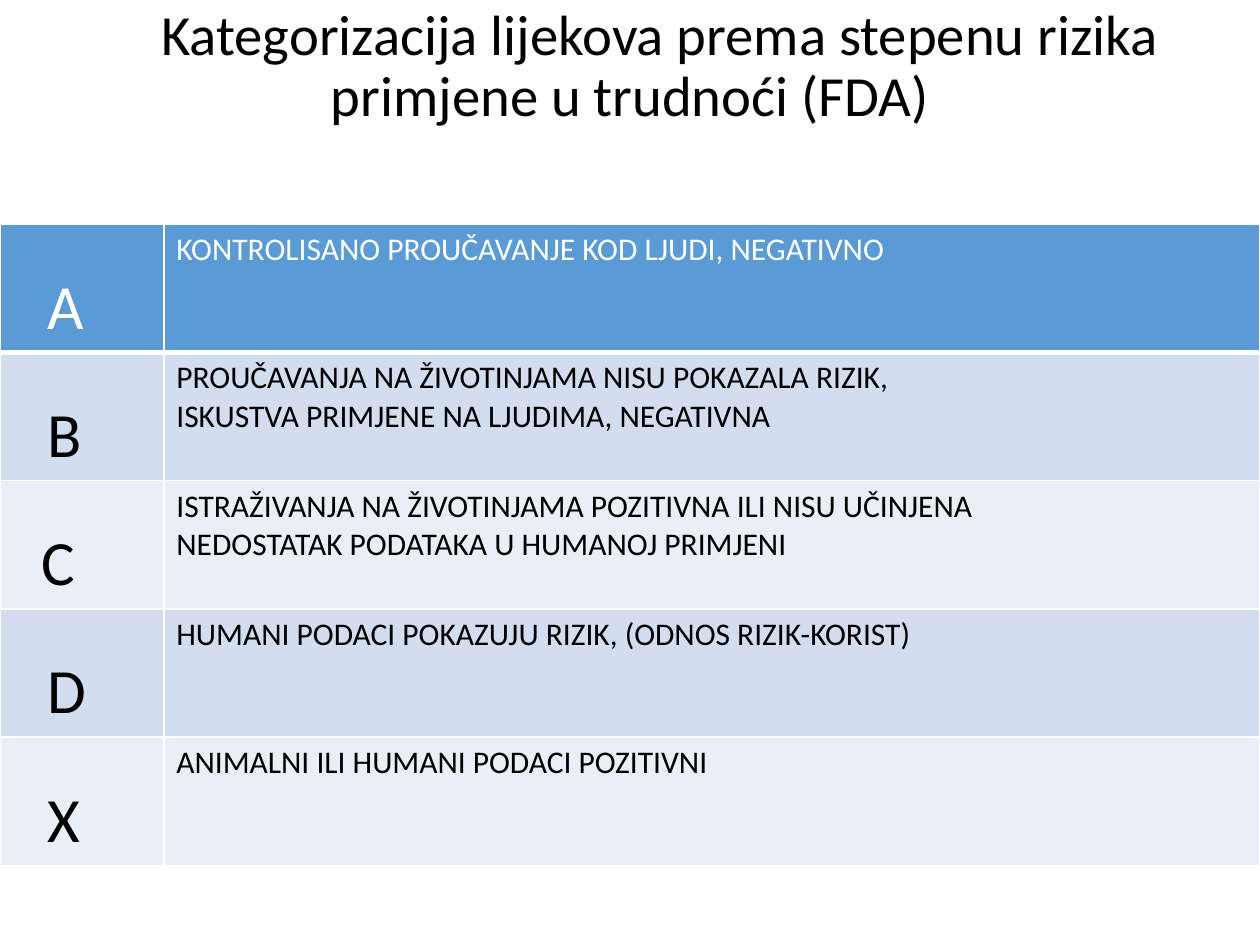
from dataclasses import dataclass

from lxml import etree
from pptx import Presentation
from pptx.dml.color import RGBColor
from pptx.enum.text import MSO_ANCHOR, MSO_AUTO_SIZE, PP_ALIGN
from pptx.oxml.ns import qn
from pptx.util import Inches, Pt

MIDDLE, TOP, BOTTOM = MSO_ANCHOR.MIDDLE, MSO_ANCHOR.TOP, MSO_ANCHOR.BOTTOM
CENTER, LEFT = PP_ALIGN.CENTER, PP_ALIGN.LEFT
TITLE_ONLY = 5


@dataclass(frozen=True)
class Theme:
    font: str = "Calibri"
    ink: str = "000000"
    paper: str = "FFFFFF"
    header: str = "5B9BD5"
    bands: tuple = ("D2DEEF", "EAEFF7")
    title_size: float = 32.4
    letter_size: float = 36
    text_size: float = 18


THEME = Theme()
WIDTH, HEIGHT = Inches(10), Inches(7.5)
LETTER_SHARE = 0.13
LETTER_INDENT = 0.38

TITLE = "Kategorizacija lijekova prema stepenu rizika primjene u trudnoći (FDA)"

# Risk letter, description lines, indent of the letter in inches
CATEGORIES = [
    ("A", ["KONTROLISANO PROUČAVANJE KOD LJUDI, NEGATIVNO"], LETTER_INDENT),
    ("B", ["PROUČAVANJA NA ŽIVOTINJAMA NISU POKAZALA RIZIK,",
           "ISKUSTVA PRIMJENE NA LJUDIMA, NEGATIVNA"], LETTER_INDENT),
    ("C", ["ISTRAŽIVANJA NA ŽIVOTINJAMA POZITIVNA ILI NISU UČINJENA",
           "NEDOSTATAK PODATAKA U HUMANOJ PRIMJENI"], 0.33),
    ("D", ["HUMANI PODACI POKAZUJU RIZIK, (ODNOS RIZIK-KORIST)"], LETTER_INDENT),
    ("X", ["ANIMALNI ILI HUMANI PODACI POZITIVNI"], LETTER_INDENT),
]


def style_paragraph(paragraph, size, color, align):
    paragraph.alignment = align
    paragraph.font.name = THEME.font
    paragraph.font.size = Pt(size)
    paragraph.font.color.rgb = RGBColor.from_string(color)


def set_borders(cell, bottom_width):
    """White rules on all four sides; they must precede the cell fill."""
    properties = cell._tc.get_or_add_tcPr()
    widths = {"a:lnL": 1, "a:lnR": 1, "a:lnT": 1, "a:lnB": bottom_width}
    for tag, width in widths.items():
        line = etree.SubElement(properties, qn(tag), w=str(Pt(width)))
        fill = etree.SubElement(line, qn("a:solidFill"))
        etree.SubElement(fill, qn("a:srgbClr"), val=THEME.paper)


def fill_cell(cell, lines, size, color, background, anchor, rule):
    set_borders(cell, rule)
    cell.fill.solid()
    cell.fill.fore_color.rgb = RGBColor.from_string(background)
    cell.vertical_anchor = anchor
    cell.text = "\n".join(lines)
    for paragraph in cell.text_frame.paragraphs:
        style_paragraph(paragraph, size, color, LEFT)


def add_heading(slide, left, top, width, height):
    heading = slide.shapes.title
    heading.left, heading.top = left, top
    heading.width, heading.height = width, height
    frame = heading.text_frame
    frame.text = TITLE
    frame.word_wrap = True
    frame.auto_size = MSO_AUTO_SIZE.NONE
    frame.vertical_anchor = MIDDLE
    paragraph = frame.paragraphs[0]
    style_paragraph(paragraph, THEME.title_size, THEME.ink, CENTER)
    paragraph.line_spacing = 0.9
    # First line starts further in than the second
    paragraph._p.get_or_add_pPr().set("indent", str(Inches(0.47)))


def add_category_table(slide, left, top, width, height):
    table = slide.shapes.add_table(
        len(CATEGORIES), 2, left, top, width, height).table
    table.columns[0].width = int(width * LETTER_SHARE)
    table.columns[1].width = width - table.columns[0].width

    for index, (letter, description, indent) in enumerate(CATEGORIES):
        is_header = index == 0
        background = THEME.header if is_header else THEME.bands[(index - 1) % 2]
        color = THEME.paper if is_header else THEME.ink
        rule = 3 if is_header else 1
        letter_cell, description_cell = table.rows[index].cells
        fill_cell(letter_cell, [letter], THEME.letter_size, color,
                  background, BOTTOM, rule)
        letter_cell.margin_left = Inches(indent)
        fill_cell(description_cell, description, THEME.text_size, color,
                  background, TOP, rule)
        for paragraph in (letter_cell.text_frame.paragraphs
                          + description_cell.text_frame.paragraphs):
            paragraph.font.bold = False


def main():
    deck = Presentation()
    deck.slide_width, deck.slide_height = WIDTH, HEIGHT
    slide = deck.slides.add_slide(deck.slide_layouts[TITLE_ONLY])
    add_heading(slide, 0, 0, WIDTH, Inches(1.07))
    add_category_table(slide, 0, Inches(1.78), WIDTH, Inches(5.09))
    deck.save("out.pptx")


if __name__ == "__main__":
    main()
